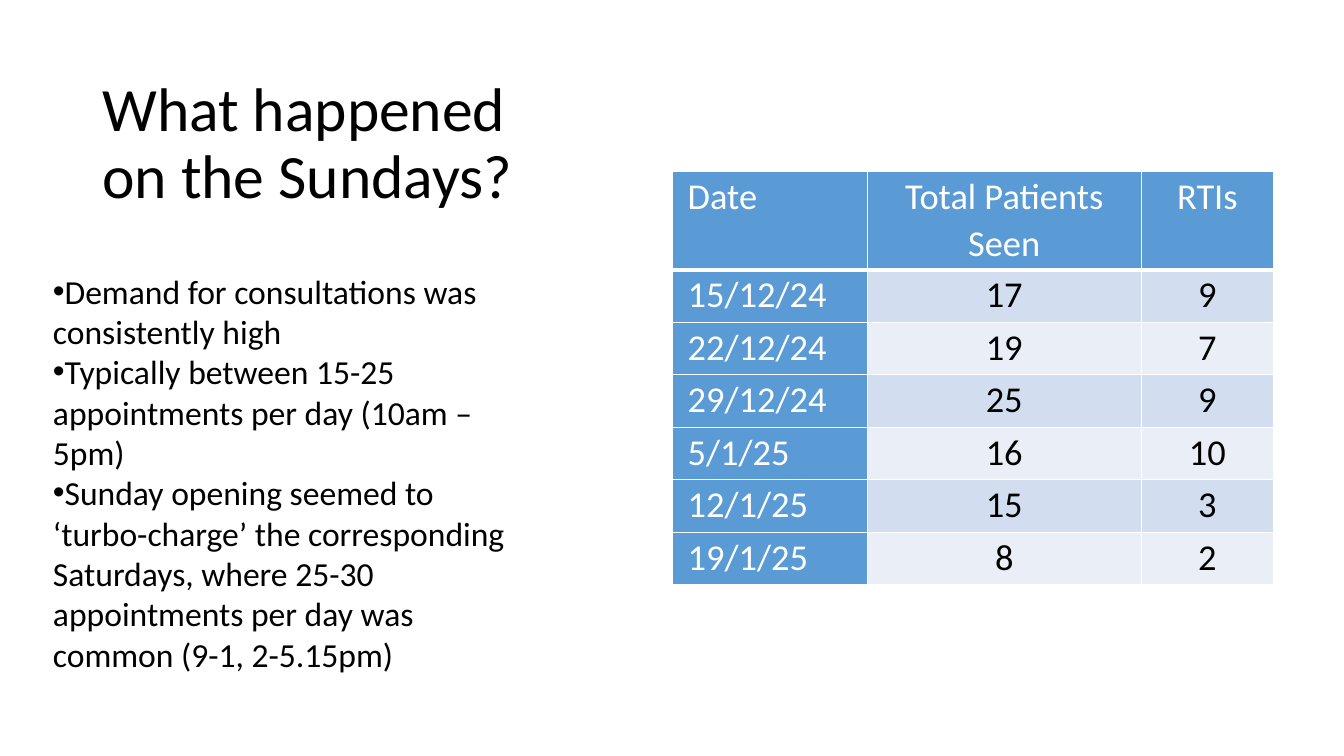
"""Build a slide on Sunday demand: a title, a bulleted summary and a table of patients seen."""
from dataclasses import dataclass

from lxml.etree import SubElement
from pptx import Presentation
from pptx.dml.color import RGBColor
from pptx.enum.text import MSO_ANCHOR as Anchor, MSO_AUTO_SIZE as AutoSize, PP_ALIGN as Align
from pptx.oxml.ns import qn
from pptx.util import Emu, Pt

FONT = "Calibri"
BLACK = RGBColor(0x00, 0x00, 0x00)
WHITE = RGBColor(0xFF, 0xFF, 0xFF)
BLUE = RGBColor(0x5B, 0x9B, 0xD5)
BAND_DARK = RGBColor(0xD2, 0xDE, 0xEF)
BAND_LIGHT = RGBColor(0xEA, 0xEF, 0xF7)


def px(length: int) -> Emu:
    return Emu(length * 9525)


@dataclass(frozen=True)
class TextBlock:
    left: int
    top: int
    width: int
    height: int
    paragraphs: tuple[str, ...]
    size: int
    anchor: Anchor = Anchor.TOP
    auto_size: AutoSize = AutoSize.NONE
    line_spacing: float | None = None
    bulleted: bool = False


@dataclass(frozen=True)
class Column:
    width: int
    align: Align


TITLE = TextBlock(88, 38, 456, 200, ("What happened on the Sundays?",), 44,
                  anchor=Anchor.MIDDLE, line_spacing=0.9)
SUMMARY = TextBlock(41, 253, 458, 397, (
    "Demand for consultations was consistently high",
    "Typically between 15-25 appointments per day (10am – 5pm)",
    "Sunday opening seemed to ‘turbo-charge’ the corresponding Saturdays, "
    "where 25-30 appointments per day was common (9-1, 2-5.15pm)",
), 24, auto_size=AutoSize.SHAPE_TO_FIT_TEXT, bulleted=True)

COLUMNS = (Column(186, Align.LEFT), Column(261, Align.CENTER), Column(126, Align.CENTER))
HEADER_HEIGHT, ROW_HEIGHT = 94, 50
SUNDAYS = (
    ("Date", "Total Patients Seen", "RTIs"),
    ("15/12/24", "17", "9"),
    ("22/12/24", "19", "7"),
    ("29/12/24", "25", "9"),
    ("5/1/25", "16", "10"),
    ("12/1/25", "15", "3"),
    ("19/1/25", "8", "2"),
)


def add_span(para, text: str, size: int, color: RGBColor) -> None:
    span = para.add_run()
    span.text = text
    span.font.name, span.font.size, span.font.bold = FONT, Pt(size), False
    span.font.color.rgb = color


def add_bullet(para) -> None:
    properties = para._p.get_or_add_pPr()
    properties.set("marL", "0")
    properties.set("indent", "0")
    SubElement(properties, qn("a:buFont"), typeface="Arial")
    SubElement(properties, qn("a:buChar"), char="•")


def add_text_block(page, block: TextBlock) -> None:
    box = page.shapes.add_textbox(px(block.left), px(block.top), px(block.width), px(block.height))
    frame = box.text_frame
    frame.word_wrap = True
    frame.auto_size = block.auto_size
    frame.vertical_anchor = block.anchor
    for index, text in enumerate(block.paragraphs):
        para = frame.add_paragraph() if index else frame.paragraphs[0]
        if block.bulleted:
            add_bullet(para)
        if block.line_spacing:
            para.line_spacing = block.line_spacing
        add_span(para, text, block.size, BLACK)


def add_border(cell, side: str, points: int) -> None:
    line = SubElement(cell._tc.get_or_add_tcPr(), qn(f"a:ln{side}"), w=str(Pt(points)))
    fill = SubElement(line, qn("a:solidFill"))
    SubElement(fill, qn("a:srgbClr"), val=str(WHITE))


def fill_cell(cell, text: str, row: int, column: int) -> None:
    is_heading = row == 0 or column == 0
    cell.margin_left = cell.margin_right = px(15)
    cell.margin_top = cell.margin_bottom = 0
    thick_side = {0: "B", 1: "T"}.get(row)
    for side in "LRTB":
        add_border(cell, side, 3 if side == thick_side else 1)
    cell.fill.solid()
    cell.fill.fore_color.rgb = BLUE if is_heading else BAND_DARK if row % 2 else BAND_LIGHT
    para = cell.text_frame.paragraphs[0]
    para.alignment = COLUMNS[column].align
    para.line_spacing = 1.07
    para.space_after = Pt(8)
    add_span(para, text, 26, WHITE if is_heading else BLACK)


def add_sundays_table(page, left: int, top: int) -> None:
    width = sum(column.width for column in COLUMNS)
    height = HEADER_HEIGHT + ROW_HEIGHT * (len(SUNDAYS) - 1)
    table = page.shapes.add_table(len(SUNDAYS), len(COLUMNS), px(left), px(top),
                                  px(width), px(height)).table
    table.horz_banding = False
    for index, column in enumerate(COLUMNS):
        table.columns[index].width = px(column.width)
    for row, values in enumerate(SUNDAYS):
        table.rows[row].height = px(ROW_HEIGHT if row else HEADER_HEIGHT)
        for column, text in enumerate(values):
            fill_cell(table.cell(row, column), text, row, column)


def main() -> None:
    deck = Presentation()
    deck.slide_width, deck.slide_height = px(1280), px(720)
    page = deck.slides.add_slide(deck.slide_layouts[6])
    add_text_block(page, TITLE)
    add_text_block(page, SUMMARY)
    add_sundays_table(page, 640, 163)
    deck.save("out.pptx")


if __name__ == "__main__":
    main()
